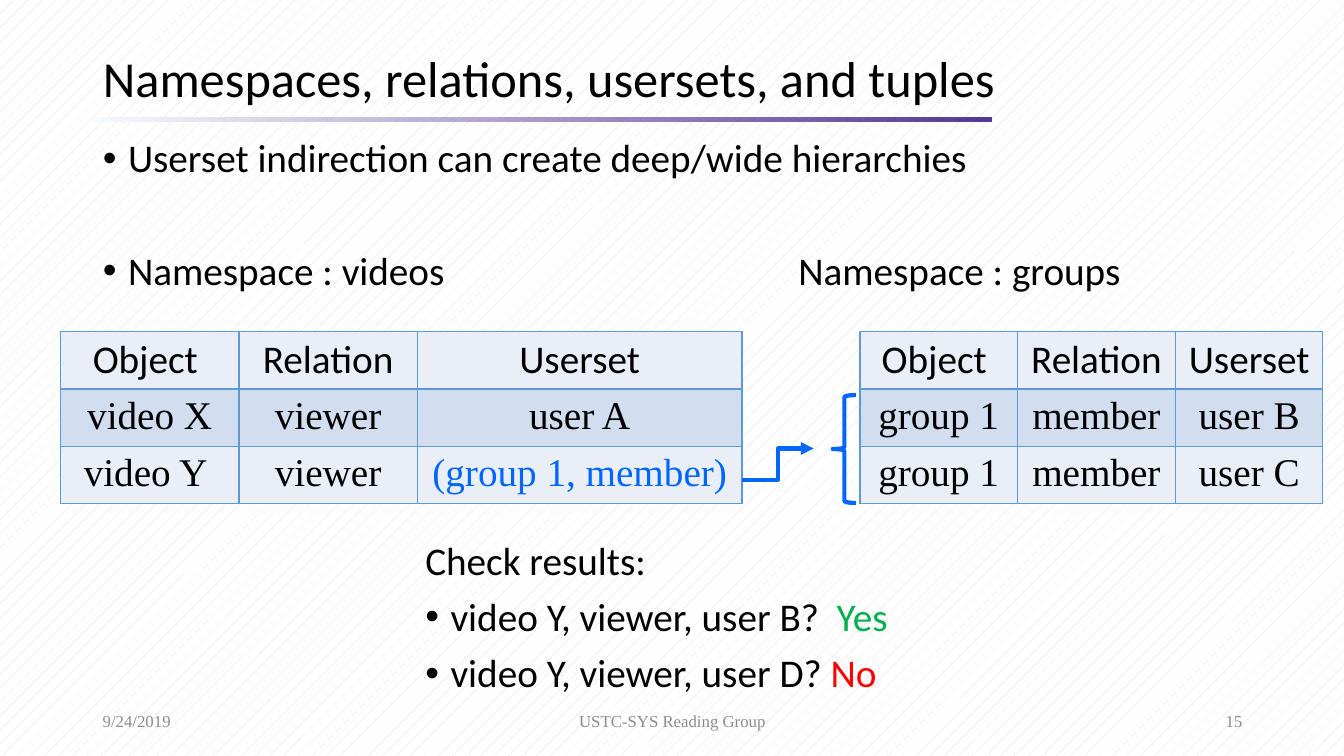
from lxml import etree
from pptx import Presentation
from pptx.dml.color import RGBColor
from pptx.enum.dml import MSO_PATTERN
from pptx.enum.shapes import MSO_CONNECTOR, MSO_SHAPE
from pptx.enum.text import MSO_ANCHOR, PP_ALIGN
from pptx.oxml.ns import qn
from pptx.util import Pt

PX = 9144
LEFT, CENTER, RIGHT = PP_ALIGN.LEFT, PP_ALIGN.CENTER, PP_ALIGN.RIGHT
MIDDLE = MSO_ANCHOR.MIDDLE
RECTANGLE, LEFT_BRACE = MSO_SHAPE.RECTANGLE, MSO_SHAPE.LEFT_BRACE
ELBOW = MSO_CONNECTOR.ELBOW
DOTS = MSO_PATTERN.PERCENT_5

SANS, SERIF = "Calibri", "Times New Roman"
BLACK = RGBColor(0x00, 0x00, 0x00)
WHITE = RGBColor(0xFF, 0xFF, 0xFF)
DOT_GRAY = RGBColor(0xD9, 0xD9, 0xD9)
FOOTER_GRAY = RGBColor(0x8C, 0x8C, 0x8C)
PALE = RGBColor(0xF7, 0xFA, 0xFD)
PURPLE = RGBColor(0x54, 0x37, 0x95)
BLUE = RGBColor(0x00, 0x66, 0xFF)
GREEN = RGBColor(0x00, 0xB0, 0x50)
RED = RGBColor(0xFF, 0x00, 0x00)
BAND_LIGHT = RGBColor(0xEA, 0xEF, 0xF7)
BAND_DARK = RGBColor(0xD2, 0xDE, 0xEF)
BORDER = "5B9BD5"

HEADER = ["Object ", "Relation", "Userset"]
VIDEOS = [HEADER, ["video X", "viewer", "user A"], ["video Y ", "viewer", "(group 1, member)"]]
GROUPS = [HEADER, ["group 1", "member", "user B"], ["group 1", "member", "user C"]]
ROW_HEIGHTS = [57, 53, 53]


def px(*lengths):
    """Turn pixel lengths into EMU."""
    return [length * PX for length in lengths]


def add_run(paragraph, text, color=BLACK, size=28, font=SANS):
    """Append one formatted run."""
    run = paragraph.add_run()
    run.text = text
    run.font.size = Pt(size)
    run.font.name = font
    run.font.bold = False
    run.font.color.rgb = color


def fill_lines(frame, lines):
    """Write lines given as (bulleted, space before, runs) into a text frame."""
    frame.word_wrap = True
    for index, (bulleted, space, runs) in enumerate(lines):
        paragraph = frame.add_paragraph() if index else frame.paragraphs[0]
        properties = paragraph._p.get_or_add_pPr()
        if bulleted:
            properties.set("marL", str(25 * PX))
            properties.set("indent", str(-25 * PX))
            etree.SubElement(properties, qn("a:buFont"), typeface="Arial")
            etree.SubElement(properties, qn("a:buChar"), char="•")
        paragraph.alignment = LEFT
        paragraph.line_spacing = 0.9
        paragraph.space_before = Pt(space)
        for text, color in runs:
            add_run(paragraph, text, color)


def place(placeholder, left, top, width, height):
    """Move a placeholder and return its text frame."""
    placeholder.left, placeholder.top, placeholder.width, placeholder.height = px(
        left, top, width, height)
    return placeholder.text_frame


def add_lines(slide, box, lines):
    """Add a text box holding formatted lines."""
    fill_lines(slide.shapes.add_textbox(*px(*box)).text_frame, lines)


def add_footer(slide, text, left, width, alignment):
    """Add one part of the footer row."""
    frame = slide.shapes.add_textbox(*px(left, 695, width, 40)).text_frame
    frame.word_wrap = True
    frame.vertical_anchor = MIDDLE
    frame.paragraphs[0].alignment = alignment
    add_run(frame.paragraphs[0], text, FOOTER_GRAY, 12, SERIF)


def add_title_rule(slide):
    """Add the fading bar below the title."""
    bar = slide.shapes.add_shape(RECTANGLE, *px(92, 116, 892, 5))
    bar.shadow.inherit = False
    bar.line.fill.background()
    bar.fill.gradient()
    bar.fill.gradient_angle = 0
    for stop, color in zip(bar.fill.gradient_stops, (PALE, PURPLE)):
        stop.color.rgb = color


def set_borders(cell):
    """Draw thin borders on all four sides of a cell."""
    properties = cell._tc.get_or_add_tcPr()
    for position, side in enumerate(("lnL", "lnR", "lnT", "lnB")):
        line = etree.Element(qn(f"a:{side}"), w=str(Pt(1)))
        solid = etree.SubElement(line, qn("a:solidFill"))
        etree.SubElement(solid, qn("a:srgbClr"), val=BORDER)
        properties.insert(position, line)


def add_relation_table(slide, left, widths, rows):
    """Add a banded table of relation tuples."""
    table = slide.shapes.add_table(
        len(rows), len(widths), *px(left, 329, sum(widths), sum(ROW_HEIGHTS))).table
    table.first_row = table.horz_banding = False
    for column, width in zip(table.columns, widths):
        column.width = width * PX
    for row, height in zip(table.rows, ROW_HEIGHTS):
        row.height = height * PX
    for r, texts in enumerate(rows):
        for c, text in enumerate(texts):
            cell = table.cell(r, c)
            cell.fill.solid()
            cell.fill.fore_color.rgb = BAND_DARK if r % 2 else BAND_LIGHT
            set_borders(cell)
            paragraph = cell.text_frame.paragraphs[0]
            paragraph.alignment = CENTER
            color = BLUE if text.startswith("(") else BLACK
            add_run(paragraph, text, color, font=SERIF if r else SANS)


def add_indirection(slide):
    """Link the userset cell to the braced group rows."""
    brace = slide.shapes.add_shape(LEFT_BRACE, *px(826, 392, 23, 107))
    brace.shadow.inherit = False
    brace.fill.background()
    arrow = slide.shapes.add_connector(ELBOW, *px(736, 476, 807, 445))
    for mark in (brace, arrow):
        mark.line.color.rgb = BLUE
        mark.line.width = Pt(3)
    etree.SubElement(arrow.line._get_or_add_ln(), qn("a:tailEnd"), type="triangle")
    etree.SubElement(arrow._element.spPr, qn("a:effectLst"))


def main():
    """Build the slide and save it."""
    deck = Presentation()
    deck.slide_width, deck.slide_height = px(1333, 750)
    slide = deck.slides.add_slide(deck.slide_layouts[1])
    background = slide.background.fill
    background.patterned()
    background.pattern = DOTS
    background.fore_color.rgb = DOT_GRAY
    background.back_color.rgb = WHITE

    add_title_rule(slide)
    title = place(slide.shapes.title, 92, 43, 1150, 75)
    title.vertical_anchor = MIDDLE
    title.paragraphs[0].alignment = LEFT
    title.paragraphs[0].line_spacing = 0.9
    add_run(title.paragraphs[0], "Namespaces, relations, usersets, and tuples", size=36)

    fill_lines(place(slide.placeholders[1], 92, 133, 1150, 543), [
        (True, 0, [("Userset indirection can create deep/wide hierarchies", BLACK)]),
        (True, 50, [("Namespace : videos", BLACK)]),
    ])
    add_lines(slide, (782, 245, 400, 50), [(False, 0, [("Namespace : groups", BLACK)])])

    add_relation_table(slide, 60, [177, 177, 322], VIDEOS)
    add_relation_table(slide, 853, [156, 157, 146], GROUPS)
    add_indirection(slide)

    add_lines(slide, (412, 532, 509, 165), [
        (False, 0, [("Check results:", BLACK)]),
        (True, 10, [("video Y, viewer, user B?  ", BLACK), ("Yes", GREEN)]),
        (True, 10, [("video Y, viewer, user D? ", BLACK), ("No", RED)]),
    ])
    add_footer(slide, "9/24/2019", 92, 300, LEFT)
    add_footer(slide, "USTC-SYS Reading Group", 442, 450, CENTER)
    add_footer(slide, "15", 942, 300, RIGHT)
    deck.save("out.pptx")


if __name__ == "__main__":
    main()
